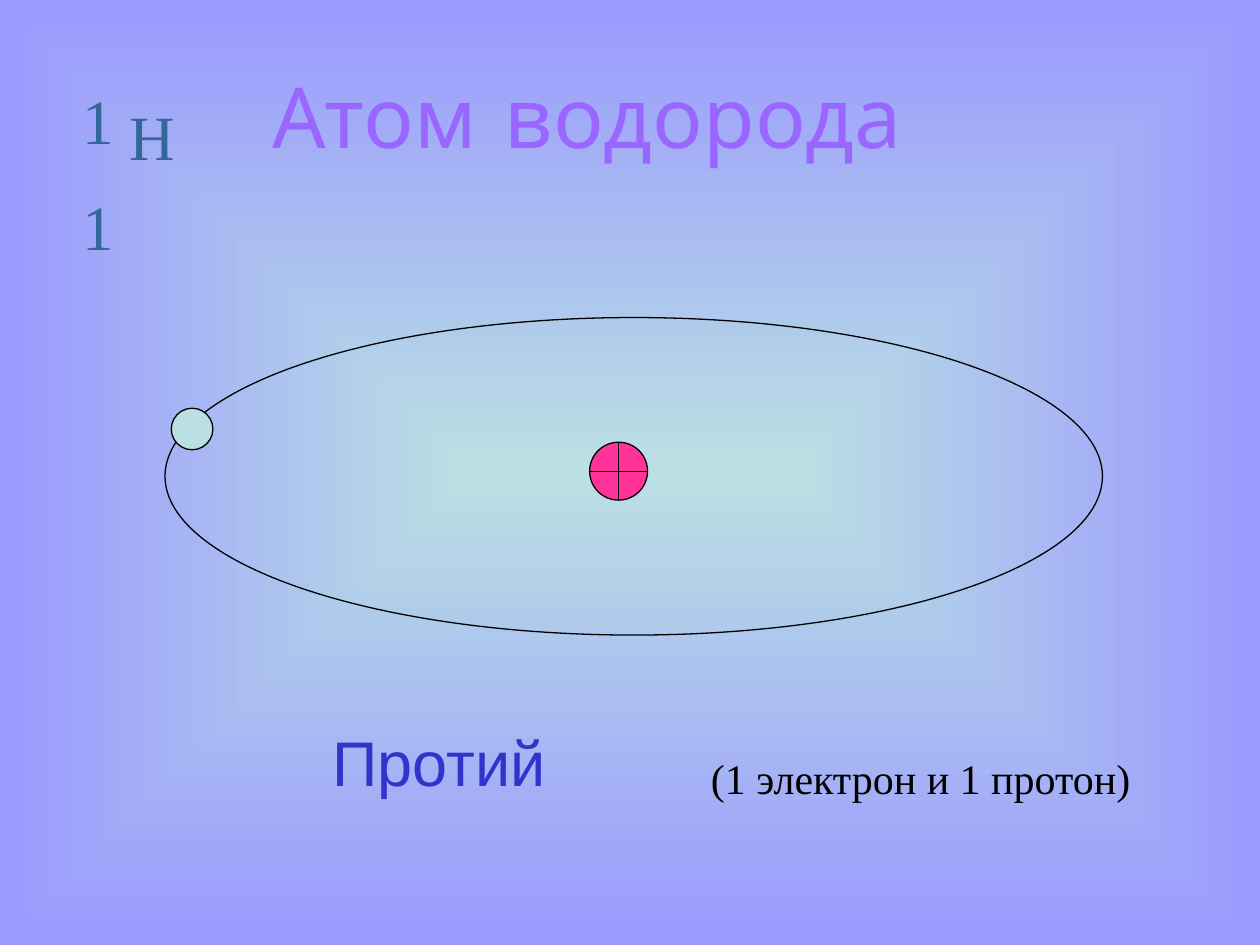
import pptx
import pptx.dml.color
import pptx.enum.shapes
import pptx.enum.text
import pptx.oxml
import pptx.oxml.ns
import pptx.util
from pptx.util import Inches

RGBColor = pptx.dml.color.RGBColor
MSO_SHAPE = pptx.enum.shapes.MSO_SHAPE
PP_ALIGN = pptx.enum.text.PP_ALIGN
qn = pptx.oxml.ns.qn

BLACK = RGBColor(0x00, 0x00, 0x00)
PALE = RGBColor(0xBB, 0xE0, 0xE3)
LILAC = RGBColor(0x99, 0x99, 0xFF)
PINK = RGBColor(0xFF, 0x33, 0x99)
PURPLE = RGBColor(0x99, 0x66, 0xFF)
TEAL = RGBColor(0x33, 0x66, 0x99)
GRAY = RGBColor(0xB2, 0xB2, 0xB2)
BLUE = RGBColor(0x33, 0x33, 0xCC)
SERIF = "Times New Roman"


def inches(*values):
    """Convert numbers to lengths."""
    return [Inches(v) for v in values]


def set_text(sp, text, size, font, color, align=PP_ALIGN.CENTER):
    """Fill a shape with one formatted line and return its paragraph."""
    tf = sp.text_frame
    tf.text = text
    p = tf.paragraphs[0]
    p.alignment = align
    r = p.runs[0]
    r.font.size = pptx.util.Pt(size)
    r.font.name = font
    r.font.color.rgb = color
    return p


def add_wordart(shapes, box, text, font, color):
    """Add a large unwrapped word and return its paragraph."""
    sp = shapes.add_textbox(*inches(*box))
    tf = sp.text_frame
    tf.word_wrap = False
    tf.margin_top = Inches(0.1)
    tf.margin_bottom = 0
    return set_text(sp, text, 36, font, color)


def paint_background(slide):
    """Apply a gradient that spreads from the slide's centre."""
    fill = slide.background.fill
    fill.gradient()
    for stop, color, position in zip(fill.gradient_stops, (PALE, LILAC), (0, 1)):
        stop.color.rgb = color
        stop.position = position
    grad = slide.element.find(".//" + qn("a:gradFill"))
    lin = grad.find(qn("a:lin"))
    grad.replace(lin, pptx.oxml.parse_xml(
        f'<a:path {pptx.oxml.ns.nsdecls("a")} path="shape">'
        '<a:fillToRect l="50000" t="50000" r="50000" b="50000"/></a:path>'))


def add_part(slide, kind, box, fill=None):
    """Add one outlined part of the atom."""
    sp = slide.shapes.add_shape(kind, *inches(*box))
    sp.shadow.inherit = False
    sp.line.color.rgb = BLACK
    sp.line.width = pptx.util.Pt(0.75)
    if fill is None:
        sp.fill.background()
    else:
        sp.fill.solid()
        sp.fill.fore_color.rgb = fill


def add_atom(slide, left, top, width, height):
    """Draw the orbit, the proton and the electron in a box."""
    add_part(slide, MSO_SHAPE.OVAL, (left, top, width, height))
    add_part(slide, MSO_SHAPE.FLOWCHART_OR, (left + 3.37, top + 0.99, 0.46, 0.46), PINK)
    add_part(slide, MSO_SHAPE.OVAL, (left + 0.05, top + 0.72, 0.33, 0.33), PALE)


def add_title(slide, box):
    """Place the slide title."""
    sp = slide.shapes.title
    sp.left, sp.top, sp.width, sp.height = inches(*box)
    sp.text_frame.vertical_anchor = pptx.enum.text.MSO_ANCHOR.MIDDLE
    set_text(sp, "Атом водорода", 48, "Comic Neue", PURPLE)


def add_symbol(slide, left, top):
    """Group the element symbol with its mass and charge numbers."""
    shapes = slide.shapes.add_group_shape().shapes
    add_wordart(shapes, (left + 0.32, top + 0.12, 0.66, 0.92), "H", SERIF, TEAL)
    for offset in (0, 0.84):
        add_wordart(shapes, (left, top + offset, 0.2, 0.34), "1", SERIF, TEAL)


def add_isotope(slide, box):
    """Write the isotope name in translucent, outlined letters."""
    p = add_wordart(slide.shapes, box, "Протий", "Arial", GRAY)
    ns = pptx.oxml.ns.nsdecls("a")
    rPr = p.runs[0].font._element
    rPr.find(".//" + qn("a:srgbClr")).append(
        pptx.oxml.parse_xml(f'<a:alpha {ns} val="50000"/>'))
    rPr.insert(0, pptx.oxml.parse_xml(
        f'<a:ln {ns} w="12700"><a:solidFill><a:srgbClr val="{BLUE}"/></a:solidFill></a:ln>'))


def add_composition(slide, box):
    """Write the particle count."""
    sp = slide.shapes.add_textbox(*inches(*box))
    sp.text_frame.word_wrap = True
    sp.text_frame.auto_size = pptx.enum.text.MSO_AUTO_SIZE.SHAPE_TO_FIT_TEXT
    p = set_text(sp, " (1 электрон и 1 протон)", 24, SERIF, BLACK, PP_ALIGN.LEFT)
    p.space_before = pptx.util.Pt(12)


def main():
    """Build and save the slide."""
    prs = pptx.Presentation()
    prs.slide_width, prs.slide_height = inches(10, 7.5)
    slide = prs.slides.add_slide(prs.slide_layouts[5])
    paint_background(slide)
    add_atom(slide, 1.31, 2.52, 7.44, 2.52)
    add_title(slide, (0.16, 0.29, 9, 1.25))
    add_symbol(slide, 0.56, 0.55)
    add_isotope(slide, (1.82, 5.64, 3.33, 0.92))
    add_composition(slide, (5.46, 5.92, 3.72, 0.5))
    prs.save("out.pptx")


if __name__ == "__main__":
    main()
